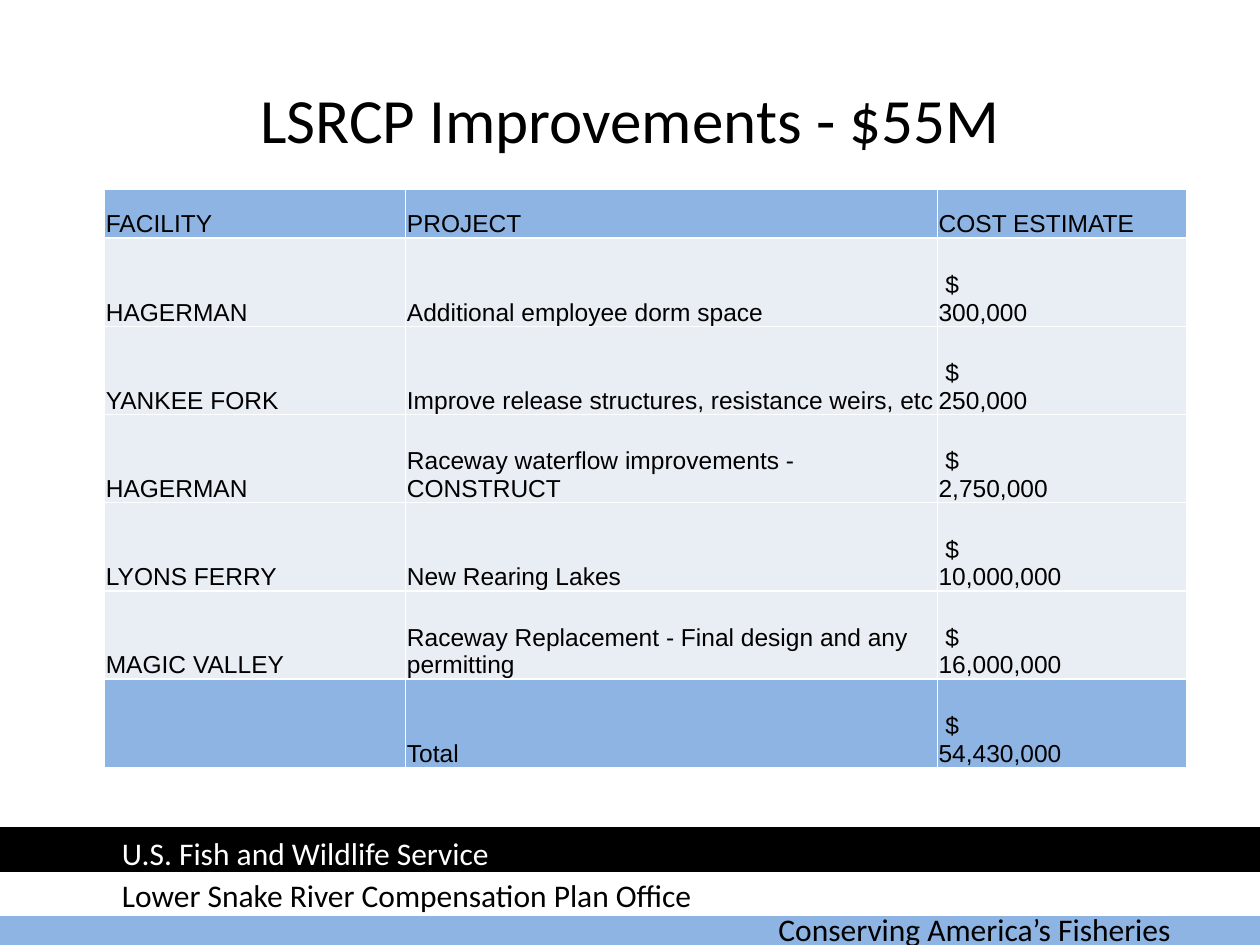
import copy
from dataclasses import dataclass

from lxml import etree
from pptx import Presentation
from pptx import util as u
from pptx.dml.color import RGBColor
from pptx.enum import shapes, text
from pptx.oxml import ns


@dataclass(frozen=True)
class Theme:
    blue: str = "8EB4E3"
    pale: str = "E9EDF4"
    white: str = "FFFFFF"
    black: str = "000000"
    heading_face: str = "Calibri"
    table_face: str = "Arial"
    title_size: int = 36
    band_size: int = 18
    table_size: int = 14
    rule_width: int = 1
    band_line: int = 2


@dataclass(frozen=True)
class Band:
    left: float
    top: float
    color: str


@dataclass(frozen=True)
class Label:
    wording: str
    left: float
    top: float
    width: float
    color: str


@dataclass(frozen=True)
class Project:
    facility: str
    work: str
    cost: str

    def cells(self) -> tuple[str, str, str]:
        return self.facility, self.work, f" $\v{self.cost}"


THEME = Theme()
BANDS = (
    Band(-0.01, 7.17, THEME.blue),
    Band(0, 6.93, THEME.white),
    Band(0, 6.58, THEME.black),
)
LABELS = (
    Label("Conserving America’s Fisheries", 6.08, 7.17, 3.67, THEME.black),
    Label("U.S. Fish and Wildlife Service", 0.87, 6.57, 4.16, THEME.white),
    Label("Lower Snake River Compensation Plan Office", 0.87, 6.9, 4.97, THEME.black),
)
HEADINGS = ("FACILITY", "PROJECT", "COST ESTIMATE")
PROJECTS = (
    Project("HAGERMAN", "Additional employee dorm space", "300,000"),
    Project("YANKEE FORK", "Improve release structures, resistance weirs, etc", "250,000"),
    Project("HAGERMAN", "Raceway waterflow improvements - CONSTRUCT", "2,750,000"),
    Project("LYONS FERRY", "New Rearing Lakes", "10,000,000"),
    Project("MAGIC VALLEY", "Raceway Replacement - Final design and any permitting", "16,000,000"),
    Project("", "Total", "54,430,000"),
)
COLUMN_WIDTHS = (2.39, 4.22, 1.98)
HEADING_HEIGHT = 0.39
PROJECT_HEIGHT = 0.7


def write(frame, wording: str, *, size: int, face: str, color: str = THEME.black,
          align=text.PP_ALIGN.LEFT) -> None:
    frame.word_wrap = True
    paragraph = frame.paragraphs[0]
    paragraph.text = wording
    paragraph.alignment = align
    for run in paragraph.runs:
        run.font.size = u.Pt(size)
        run.font.name = face
        run.font.color.rgb = RGBColor.from_string(color)
    for line_break in paragraph._p.findall(ns.qn("a:br")):
        line_break.append(copy.deepcopy(paragraph.runs[0]._r.rPr))


def draw_band(slide, band: Band) -> None:
    bar = slide.shapes.add_shape(
        shapes.MSO_SHAPE.RECTANGLE,
        u.Inches(band.left), u.Inches(band.top), u.Inches(10), u.Inches(0.33))
    bar.shadow.inherit = False
    bar.fill.solid()
    bar.fill.fore_color.rgb = RGBColor.from_string(band.color)
    bar.line.color.rgb = RGBColor.from_string(band.color)
    bar.line.width = u.Pt(THEME.band_line)


def draw_label(slide, label: Label) -> None:
    box = slide.shapes.add_textbox(
        u.Inches(label.left), u.Inches(label.top), u.Inches(label.width), u.Inches(0.4))
    write(box.text_frame, label.wording, size=THEME.band_size,
          face=THEME.heading_face, color=label.color)


def rule_cell(cell) -> None:
    properties = cell._tc.get_or_add_tcPr()
    for side in ("a:lnL", "a:lnR", "a:lnT", "a:lnB"):
        rule = etree.SubElement(properties, ns.qn(side), w=str(u.Pt(THEME.rule_width)))
        fill = etree.SubElement(rule, ns.qn("a:solidFill"))
        etree.SubElement(fill, ns.qn("a:srgbClr"), val=THEME.white)


def draw_cell(cell, wording: str, fill: str) -> None:
    rule_cell(cell)
    cell.fill.solid()
    cell.fill.fore_color.rgb = RGBColor.from_string(fill)
    cell.margin_left = cell.margin_right = cell.margin_top = u.Inches(0.01)
    cell.margin_bottom = 0
    cell.vertical_anchor = text.MSO_ANCHOR.BOTTOM
    write(cell.text_frame, wording, size=THEME.table_size, face=THEME.table_face)


def draw_costs(slide) -> None:
    rows = [HEADINGS, *(project.cells() for project in PROJECTS)]
    heights = [HEADING_HEIGHT] + [PROJECT_HEIGHT] * len(PROJECTS)
    costs = slide.shapes.add_table(
        len(rows), len(HEADINGS), u.Inches(0.83), u.Inches(1.5),
        u.Inches(sum(COLUMN_WIDTHS)), u.Inches(sum(heights))).table
    costs.first_row = costs.horz_banding = False
    for column, width in zip(costs.columns, COLUMN_WIDTHS):
        column.width = u.Inches(width)
    for index, (row, height, wordings) in enumerate(zip(costs.rows, heights, rows)):
        row.height = u.Inches(height)
        fill = THEME.blue if index in (0, len(rows) - 1) else THEME.pale
        for cell, wording in zip(row.cells, wordings):
            draw_cell(cell, wording, fill)


def main() -> None:
    deck = Presentation()
    deck.slide_width, deck.slide_height = u.Inches(10), u.Inches(7.5)
    slide = deck.slides.add_slide(deck.slide_layouts[5])
    for band in BANDS:
        draw_band(slide, band)
    for label in LABELS:
        draw_label(slide, label)
    title = slide.shapes.title
    title.left, title.top = u.Inches(0.5), u.Inches(0.5)
    title.width, title.height = u.Inches(9), u.Inches(0.87)
    title.text_frame.vertical_anchor = text.MSO_ANCHOR.MIDDLE
    write(title.text_frame, "LSRCP Improvements - $55M", size=THEME.title_size,
          face=THEME.heading_face, align=text.PP_ALIGN.CENTER)
    draw_costs(slide)
    deck.save("out.pptx")


if __name__ == "__main__":
    main()
